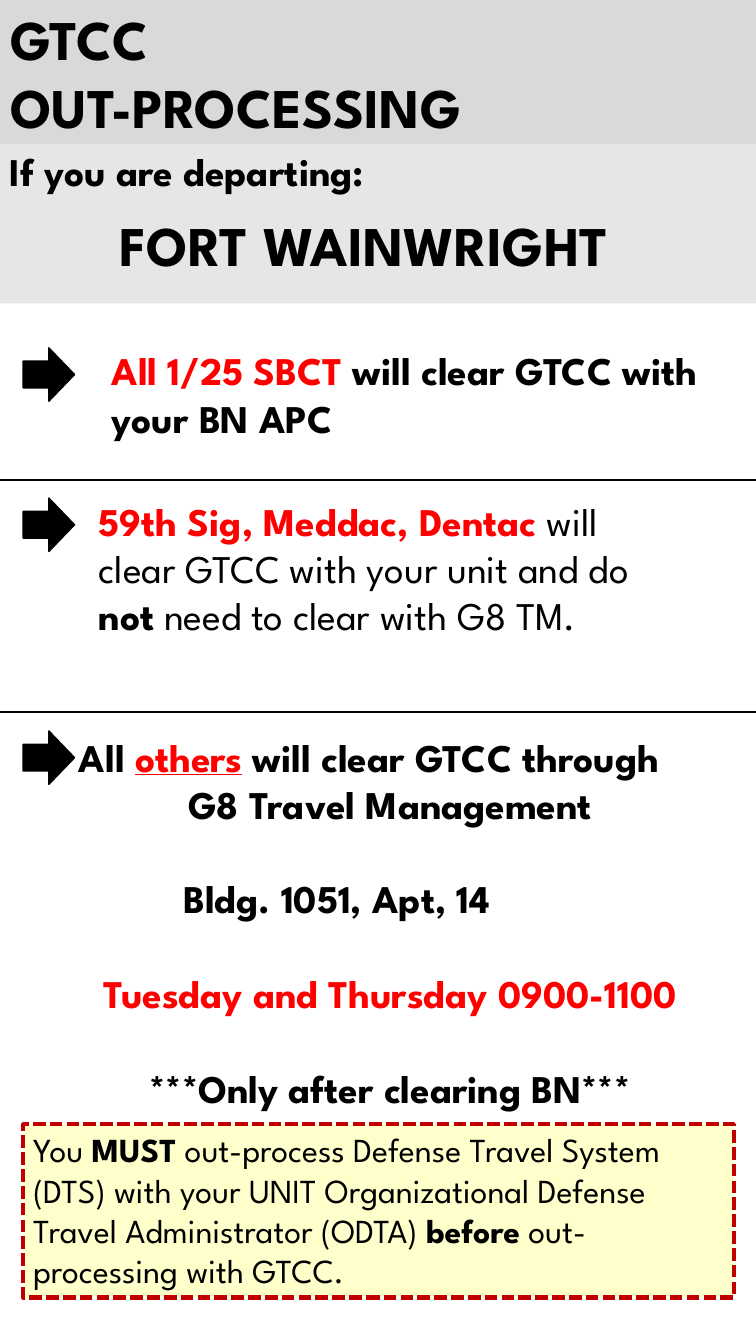
from dataclasses import dataclass

from lxml.etree import SubElement
from pptx import Presentation
from pptx.dml.color import RGBColor
from pptx.enum.dml import MSO_LINE
from pptx.enum.shapes import MSO_CONNECTOR, MSO_SHAPE
from pptx.enum.text import MSO_ANCHOR, MSO_AUTO_SIZE, PP_ALIGN
from pptx.oxml.ns import qn
from pptx.shapes.autoshape import Shape
from pptx.slide import Slide
from pptx.text.text import TextFrame
from pptx.util import Emu, Pt

EMU_PER_PX = 9144  # 100 px to the inch
FONT = "League Spartan"
BLACK, RED = "000000", "FF0000"
BLANK_LINE = 34  # points, one line of 28 pt text


@dataclass(frozen=True)
class Box:
    left: int
    top: int
    width: int
    height: int


@dataclass(frozen=True)
class Span:
    text: str
    color: str = BLACK
    bold: bool = True
    underline: bool = False


@dataclass(frozen=True)
class Line:
    spans: tuple[Span, ...]
    size: int = 28
    align: PP_ALIGN = PP_ALIGN.LEFT
    before: int = 0
    margin_left: int = 0
    margin_right: int = 0


@dataclass(frozen=True)
class TextBlock:
    box: Box
    lines: tuple[Line, ...]
    wrap: bool = True


CENTER = PP_ALIGN.CENTER
TITLE = (Line((Span("GTCC"),), 40), Line((Span("OUT-PROCESSING"),), 40))

TEXT_BLOCKS = (
    TextBlock(Box(0, 141, 419, 57), (Line((Span("If you are departing:"),)),), wrap=False),
    TextBlock(Box(3, 204, 716, 77), (Line((Span("FORT WAINWRIGHT"),), 40, CENTER),)),
    TextBlock(Box(101, 339, 635, 104), (
        Line((Span("All 1/25 SBCT ", RED), Span("will clear GTCC with your BN APC"))),
    )),
    TextBlock(Box(88, 488, 600, 199), (
        Line((
            Span("59th Sig, Meddac, Dentac ", RED),
            Span("will clear GTCC with your unit and do ", bold=False),
            Span("not"),
            Span(" need to clear with G8 TM.", bold=False),
        )),
    )),
    TextBlock(Box(59, 722, 656, 387), (
        Line((
            Span("All "),
            Span("others", RED, underline=True),
            Span(" will clear GTCC through"),
        ), align=CENTER, margin_right=42),
        Line((Span("G8 Travel Management"),), align=CENTER),
        Line((Span("Bldg. 1051, Apt, 14"),), before=BLANK_LINE, margin_left=113),
        Line((Span("Tuesday and Thursday 0900-1100", RED),), align=CENTER, before=BLANK_LINE),
        Line((Span("***Only after clearing BN***"),), align=CENTER, before=BLANK_LINE),
    )),
)

CALLOUT = (
    Line((
        Span("You ", bold=False),
        Span("MUST"),
        Span(" out-process Defense Travel System (DTS) with your UNIT Organizational "
             "Defense Travel Administrator (ODTA) ", bold=False),
        Span("before"),
        Span(" out-processing with GTCC.", bold=False),
    ), 24),
)

ARROW_TOPS = (345, 494, 725)
DIVIDER_TOPS = (476, 706)


def px(length: int) -> Emu:
    return Emu(length * EMU_PER_PX)


def rgb(color: str) -> RGBColor:
    return RGBColor.from_string(color)


def place(box: Box) -> tuple[Emu, Emu, Emu, Emu]:
    return px(box.left), px(box.top), px(box.width), px(box.height)


def write_lines(frame: TextFrame, lines: tuple[Line, ...], wrap: bool = True) -> None:
    frame.word_wrap = wrap
    frame.auto_size = MSO_AUTO_SIZE.NONE
    for index, line in enumerate(lines):
        paragraph = frame.add_paragraph() if index else frame.paragraphs[0]
        paragraph.alignment = line.align
        paragraph.space_before = Pt(line.before)
        paragraph.font.name = FONT
        paragraph.font.size = Pt(line.size)
        properties = paragraph._p.get_or_add_pPr()
        properties.set("marL", str(px(line.margin_left)))
        properties.set("marR", str(px(line.margin_right)))
        for span in line.spans:
            run = paragraph.add_run()
            run.text = span.text
            run.font.bold = span.bold
            run.font.color.rgb = rgb(span.color)
            if span.underline:
                run.font.underline = True


def add_filled_shape(slide: Slide, kind: MSO_SHAPE, box: Box, fill: str,
                     line: str | None = None, line_width: int = 1) -> Shape:
    shape = slide.shapes.add_shape(kind, *place(box))
    shape.shadow.inherit = False
    shape.fill.solid()
    shape.fill.fore_color.rgb = rgb(fill)
    if line:
        shape.line.color.rgb = rgb(line)
        shape.line.width = Pt(line_width)
    else:
        shape.line.fill.background()
    return shape


def add_divider(slide: Slide, top: int) -> None:
    divider = slide.shapes.add_connector(
        MSO_CONNECTOR.STRAIGHT, px(0), px(top), px(750), px(top))
    divider.line.color.rgb = rgb(BLACK)
    divider.line.width = Pt(1)
    SubElement(divider._element.spPr, qn("a:effectLst"))


def add_title(slide: Slide) -> None:
    title = slide.shapes.title
    title.left, title.top, title.width, title.height = place(Box(0, 0, 750, 143))
    title.fill.solid()
    title.fill.fore_color.rgb = rgb("D9D9D9")
    title.text_frame.vertical_anchor = MSO_ANCHOR.MIDDLE
    write_lines(title.text_frame, TITLE)


def add_callout(slide: Slide) -> None:
    callout = add_filled_shape(
        slide, MSO_SHAPE.RECTANGLE, Box(23, 1115, 705, 172), "FFFFCC", "C00000", 3)
    callout.line.dash_style = MSO_LINE.SQUARE_DOT
    callout.text_frame.vertical_anchor = MSO_ANCHOR.TOP
    write_lines(callout.text_frame, CALLOUT)


def main() -> None:
    presentation = Presentation()
    presentation.slide_width, presentation.slide_height = px(750), px(1333)
    slide = presentation.slides.add_slide(presentation.slide_layouts.get_by_name("Title Only"))

    add_title(slide)
    add_filled_shape(slide, MSO_SHAPE.RECTANGLE, Box(0, 143, 750, 158), "E7E6E6")
    for top in DIVIDER_TOPS:
        add_divider(slide, top)
    for block in TEXT_BLOCKS:
        text_box = slide.shapes.add_textbox(*place(block.box))
        write_lines(text_box.text_frame, block.lines, block.wrap)
    for top in ARROW_TOPS:
        add_filled_shape(slide, MSO_SHAPE.RIGHT_ARROW, Box(23, top, 51, 53), BLACK, BLACK)
    add_callout(slide)

    presentation.save("out.pptx")


if __name__ == "__main__":
    main()
